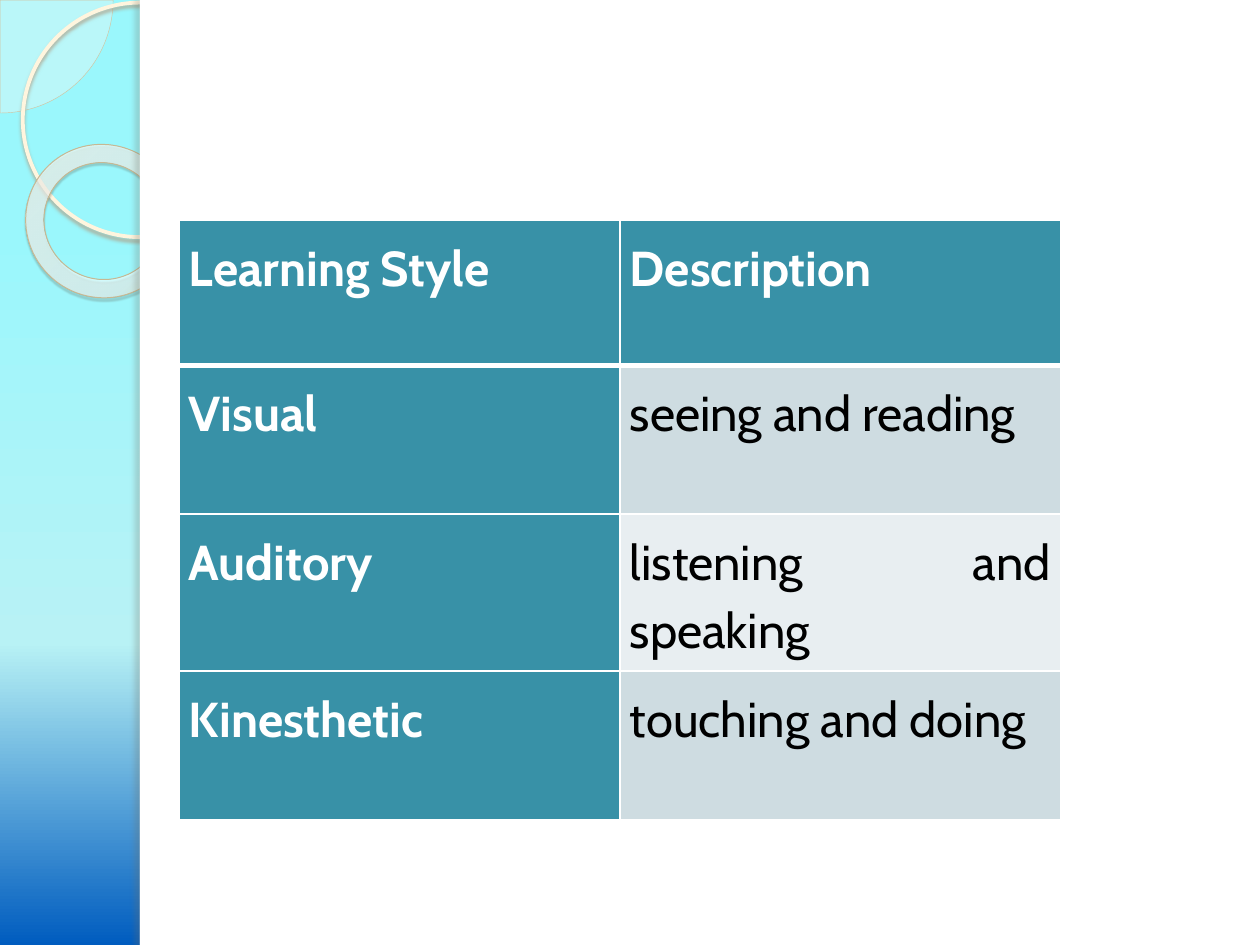
from dataclasses import dataclass
from typing import Any

from lxml.etree import SubElement
from pptx import Presentation
from pptx.dml.color import RGBColor
from pptx.enum.shapes import MSO_SHAPE as Shape
from pptx.enum.text import PP_ALIGN as Align
from pptx.oxml.ns import qn
from pptx.util import Pt


def color(value):
    return RGBColor.from_string(value)


def add_color(parent, value, opacity=100):
    element = SubElement(parent, qn("a:srgbClr"), val=value)
    if opacity < 100:
        SubElement(element, qn("a:alpha"), val=str(opacity * 1000))


def set_gradient(fill, holder, stops, angle=None, focus=None):
    fill.gradient()
    gradient = next(holder.iter(qn("a:gradFill")))
    for child in list(gradient):
        gradient.remove(child)
    stop_list = SubElement(gradient, qn("a:gsLst"))
    for position, value, opacity in stops:
        stop = SubElement(stop_list, qn("a:gs"), pos=str(position * 1000))
        add_color(stop, value, opacity)
    if focus:
        path = SubElement(gradient, qn("a:path"), path="circle")
        sides = {side: str(share * 1000) for side, share in zip("ltrb", focus)}
        SubElement(path, qn("a:fillToRect"), **sides)
    else:
        SubElement(gradient, qn("a:lin"), ang=str(angle * 60000), scaled="0")


def write(frame, text, font="Cabin", size=28, ink="000000", bold=False):
    frame.word_wrap = True
    paragraph = frame.paragraphs[0]
    paragraph.alignment = Align.JUSTIFY
    paragraph.line_spacing = 1.15
    paragraph.space_after = Pt(15)
    run = paragraph.add_run()
    run.text = text
    run.font.name = font
    run.font.size = Pt(size)
    run.font.bold = bold
    run.font.color.rgb = color(ink)


@dataclass
class Deck:
    """Holds the colours and the current slide, and draws each kind of element."""

    slide: Any
    paper: str = "FFFFFF"
    accent: str = "3891A7"
    bands: tuple = ("CEDCE1", "E8EEF1")
    inset: float = 5.76

    def background(self, stops, angle):
        background = self.slide.background
        set_gradient(background.fill, self.slide.element, stops, angle)

    def shape(self, kind, box, fill=None, opacity=100, line=None, shadow=None,
              adjustments=(), rotation=0):
        shape = self.slide.shapes.add_shape(kind, *map(Pt, box))
        shape.rotation = rotation
        shape.shadow.inherit = False
        for index, value in enumerate(adjustments):
            shape.adjustments[index] = value
        if fill:
            shape.fill.solid()
            shape.fill.fore_color.rgb = color(fill)
            solid = shape.element.spPr.find(qn("a:solidFill"))
            solid.clear()
            add_color(solid, fill, opacity)
        else:
            shape.fill.background()
        if line:
            shape.line.color.rgb = color(line[0])
            shape.line.width = Pt(line[1])
        else:
            shape.line.fill.background()
        if shadow:
            self.shadow(shape, *shadow)
        return shape

    def shadow(self, shape, value, opacity, blur, distance, angle):
        effects = shape.element.spPr.find(qn("a:effectLst"))
        outer = SubElement(effects, qn("a:outerShdw"), blurRad=str(Pt(blur)),
                           dist=str(Pt(distance)), dir=str(angle * 60000),
                           algn="tl", rotWithShape="0")
        add_color(outer, value, opacity)

    def borders(self, cell, top, bottom):
        properties = cell._tc.get_or_add_tcPr()
        for side, width in (("L", 1), ("R", 1), ("T", top), ("B", bottom)):
            line = SubElement(properties, qn(f"a:ln{side}"), w=str(Pt(width)))
            add_color(SubElement(line, qn("a:solidFill")), self.paper)

    def table(self, left, top, widths, heights, rows):
        table = self.slide.shapes.add_table(
            len(rows), len(widths), Pt(left), Pt(top),
            Pt(sum(widths)), Pt(sum(heights))).table
        for column, width in zip(table.columns, widths):
            column.width = Pt(width)
        for row, height in zip(table.rows, heights):
            row.height = Pt(height)
        for row_index, texts in enumerate(rows):
            for column_index, text in enumerate(texts):
                cell = table.cell(row_index, column_index)
                heading = row_index == 0 or column_index == 0
                self.borders(cell, 3 if row_index == 1 else 1,
                             3 if row_index == 0 else 1)
                cell.fill.solid()
                band = self.bands[(row_index - 1) % 2]
                cell.fill.fore_color.rgb = color(self.accent if heading else band)
                cell.margin_left = cell.margin_right = Pt(self.inset)
                cell.margin_top = cell.margin_bottom = Pt(self.inset)
                write(cell.text_frame, text, bold=heading,
                      ink=self.paper if heading else "000000")


def main():
    presentation = Presentation()
    presentation.slide_width, presentation.slide_height = Pt(720), Pt(540)
    deck = Deck(presentation.slides.add_slide(presentation.slide_layouts[6]))

    deck.background([(24, "9AF7FC", 100), (68, "B8F2F5", 29),
                     (100, "005CBF", 100)], angle=90)
    deck.shape(Shape.PIE, (-64.4, -64.4, 129, 129), fill="FEFAF4", opacity=33,
               line=("D3C39F", 0.25), adjustments=(0, 54.02))
    deck.shape(Shape.OVAL, (13, 1.5, 134, 134), line=("FFF5DE", 2.15),
               shadow=("B0A68F", 85, 2, 2, 90))
    ring = deck.shape(Shape.DONUT, (14.4, 82.8, 88.6, 87.1),
                      line=("C7B893", 0.58), adjustments=(0.12,),
                      rotation=38.6, shadow=("5A5444", 35, 1, 1.2, 75))
    set_gradient(ring.fill, ring.element,
                 [(0, "FFFCF6", 70), (70, "FFFEFB", 55), (100, "F0D28E", 60)],
                 focus=(-408, -50, 508, 150))
    deck.shape(Shape.RECTANGLE, (79.9, 0, 640.1, 540), fill=deck.paper)
    deck.shape(Shape.RECTANGLE, (79.9, 0, 5.76, 540), fill=deck.paper,
               shadow=("736F63", 25, 3, 3, 180))
    deck.table(102.2, 126, [252, 252], [82.8, 85, 82.8, 85], [
        ("Learning Style", "Description"),
        ("Visual", "seeing and reading"),
        ("Auditory", "listening and speaking"),
        ("Kinesthetic", "touching and doing"),
    ])
    presentation.save("out.pptx")


if __name__ == "__main__":
    main()
